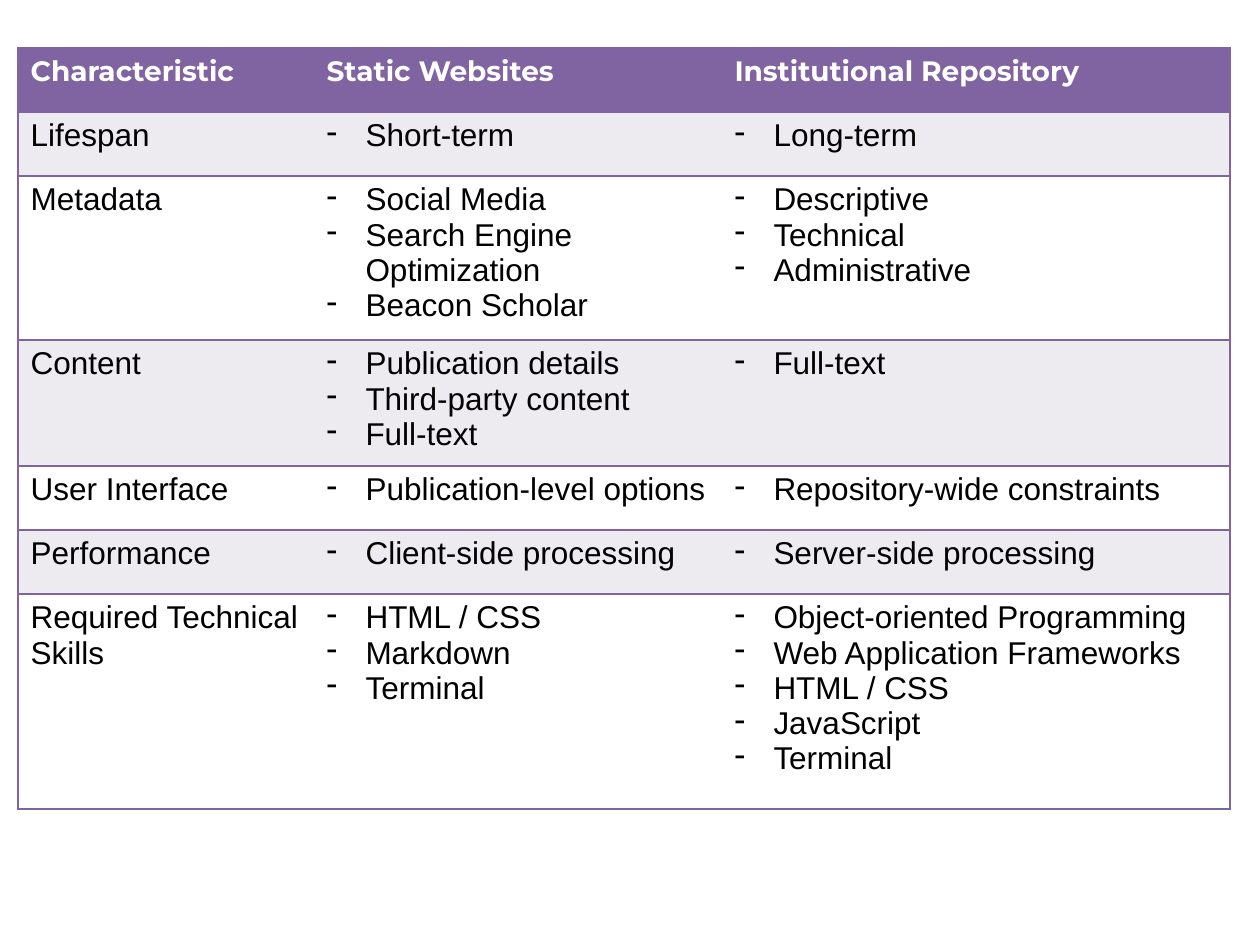
from dataclasses import dataclass

from lxml import etree
from pptx import Presentation, util as u
from pptx.dml.color import RGBColor
from pptx.oxml import ns

PX = 914400 / 126
COLORS = {"purple": "8064A2", "band": "EDEAF0", "white": "FFFFFF", "black": "000000"}
COLUMN_WIDTHS = (296, 408, 508)
HEADINGS = ("Characteristic", "Static Websites", "Institutional Repository")
HEADER_HEIGHT = 64
BULLET_INDENT = 39


@dataclass
class Comparison:
    characteristic: str
    websites: list[str]
    repository: list[str]
    height: int = 64


@dataclass
class TextStyle:
    font: str
    size: int
    color: str
    bold: bool = False


HEADER_TEXT = TextStyle("Montserrat", 16, "white", True)
BODY_TEXT = TextStyle("Arial", 18, "black")

COMPARISONS = [
    Comparison("Lifespan", ["Short-term"], ["Long-term"]),
    Comparison("Metadata",
               ["Social Media", "Search Engine Optimization", "Beacon Scholar"],
               ["Descriptive", "Technical", "Administrative"], 164),
    Comparison("Content",
               ["Publication details", "Third-party content", "Full-text"],
               ["Full-text"], 126),
    Comparison("User Interface", ["Publication-level options"],
               ["Repository-wide constraints"]),
    Comparison("Performance", ["Client-side processing"], ["Server-side processing"]),
    Comparison("Required Technical Skills",
               ["HTML / CSS", "Markdown", "Terminal"],
               ["Object-oriented Programming", "Web Application Frameworks",
                "HTML / CSS", "JavaScript", "Terminal"], 215),
]


def px(length: int) -> int:
    return round(length * PX)


def add_dash(paragraph) -> None:
    properties = paragraph._p.get_or_add_pPr()
    properties.set("marL", str(px(BULLET_INDENT)))
    properties.set("indent", str(-px(BULLET_INDENT)))
    etree.SubElement(properties, ns.qn("a:buChar")).set("char", "-")


def set_borders(cell, sides: str) -> None:
    """Rule the given sides (of L, R, T, B) and clear the others."""
    properties = cell._tc.get_or_add_tcPr()
    for position, side in enumerate("LRTB"):
        line = etree.Element(ns.qn(f"a:ln{side}"), w=str(u.Pt(1)))
        if side in sides:
            fill = etree.SubElement(line, ns.qn("a:solidFill"))
            etree.SubElement(fill, ns.qn("a:srgbClr")).set("val", COLORS["purple"])
        else:
            etree.SubElement(line, ns.qn("a:noFill"))
        properties.insert(position, line)


def fill_cell(cell, lines: list[str], style: TextStyle, background: str,
              sides: str, dashed: bool) -> None:
    cell.fill.solid()
    cell.fill.fore_color.rgb = RGBColor.from_string(COLORS[background])
    set_borders(cell, sides)
    cell.text_frame.text = "\n".join(lines)
    for paragraph in cell.text_frame.paragraphs:
        if dashed:
            add_dash(paragraph)
        for run in paragraph.runs:
            run.font.name = style.font
            run.font.size = u.Pt(style.size)
            run.font.bold = style.bold
            run.font.color.rgb = RGBColor.from_string(COLORS[style.color])


def main() -> None:
    deck = Presentation()
    deck.slide_width, deck.slide_height = px(1260), px(945)
    slide = deck.slides.add_slide(deck.slide_layouts[6])

    # Comparison table
    heights = [HEADER_HEIGHT] + [item.height for item in COMPARISONS]
    table = slide.shapes.add_table(
        len(heights), len(COLUMN_WIDTHS), px(18), px(48),
        px(sum(COLUMN_WIDTHS)), px(sum(heights))).table
    table.horz_banding = False
    for column, width in zip(table.columns, COLUMN_WIDTHS):
        column.width = px(width)
    for row, height in zip(table.rows, heights):
        row.height = px(height)

    # Header and alternately shaded body rows
    contents = [[[heading] for heading in HEADINGS]]
    contents += [[[item.characteristic], item.websites, item.repository]
                 for item in COMPARISONS]
    outer_sides = ("LTB", "TB", "RTB")
    for r, entries in enumerate(contents):
        style = BODY_TEXT if r else HEADER_TEXT
        background = ("band" if r % 2 else "white") if r else "purple"
        for c, lines in enumerate(entries):
            fill_cell(table.cell(r, c), lines, style, background,
                      outer_sides[c], dashed=r > 0 and c > 0)

    deck.save("out.pptx")


if __name__ == "__main__":
    main()
